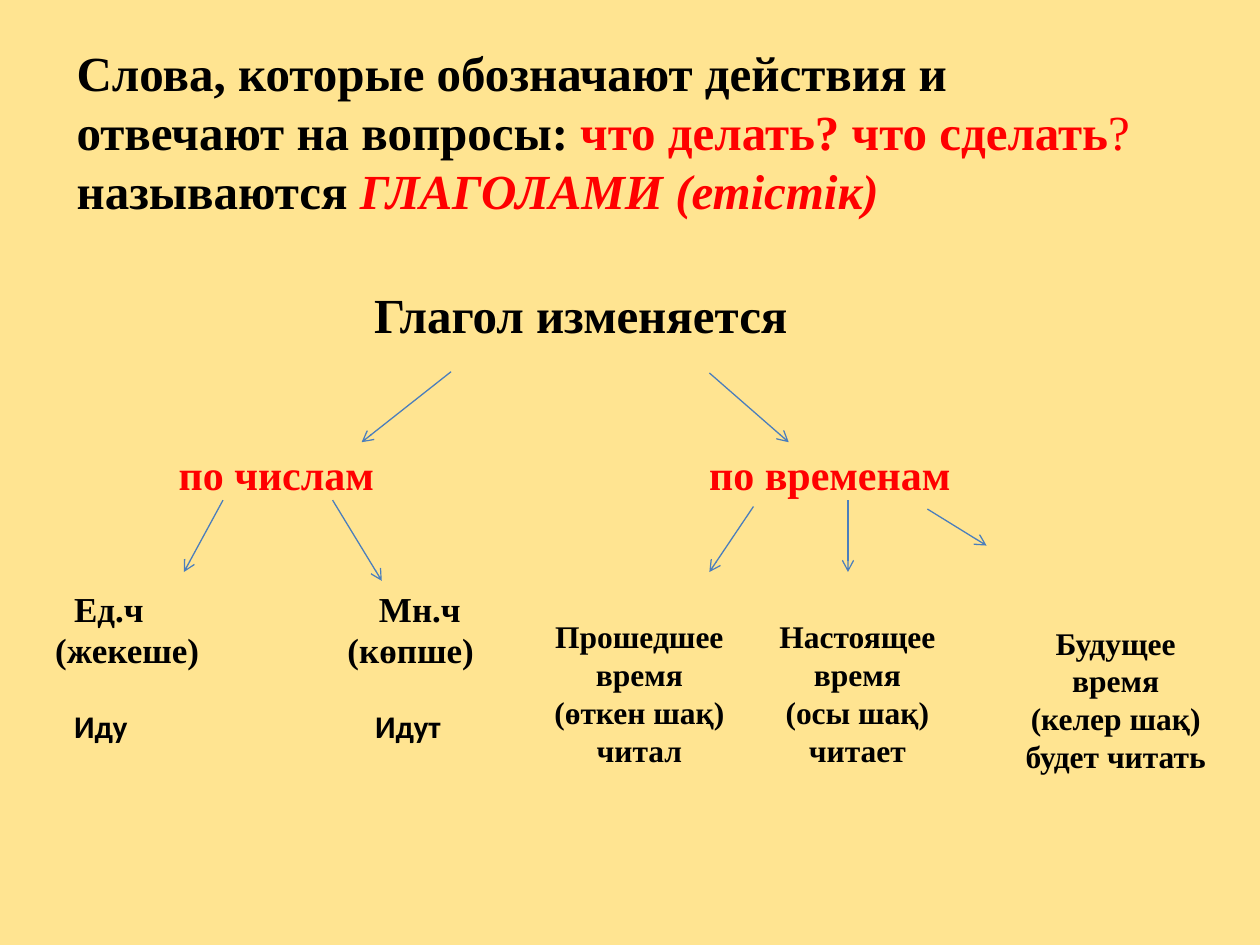
from dataclasses import dataclass

from lxml import etree
from pptx import Presentation
from pptx.dml.color import RGBColor
from pptx.enum.shapes import MSO_CONNECTOR
from pptx.enum.text import PP_ALIGN
from pptx.oxml.ns import qn
from pptx.util import Inches, Pt

STRAIGHT = MSO_CONNECTOR.STRAIGHT
LEFT, CENTER = PP_ALIGN.LEFT, PP_ALIGN.CENTER


@dataclass(frozen=True)
class Theme:
    back: RGBColor = RGBColor.from_string("FFE491")
    ink: RGBColor = RGBColor.from_string("000000")
    red: RGBColor = RGBColor.from_string("FF0000")
    line: RGBColor = RGBColor.from_string("4B7EBC")
    serif: str = "Times New Roman"
    sans: str = "Calibri"
    head: int = 28
    branch: int = 24
    number: int = 20
    small: int = 18
    stroke: float = 0.75


THEME = Theme()

TITLE = [
    ("Слова, которые обозначают действия и отвечают на вопросы: ", THEME.ink, {}),
    ("что делать? что сделать", THEME.red, {}),
    ("? ", THEME.red, {"bold": False}),
    ("называются ", THEME.ink, {}),
    ("ГЛАГОЛАМИ (етістік)", THEME.red, {"italic": True}),
]
BRANCHES = [("по числам", 1.32), ("по временам", 5.53)]
NUMBERS = [
    ("Ед.ч", 0.49, 4.61),
    ("Мн.ч", 2.91, 4.61),
    ("(жекеше)", 0.34, 4.94),
    ("(көпше)", 2.66, 4.94),
]
SAMPLES = [("Иду", 0.49), ("Идут", 2.88)]
TENSES = [
    (4.21, 4.85, "Прошедшее время", "(өткен шақ) читал"),
    (5.94, 4.85, "Настоящее время", "(осы шақ) читает"),
    (7.99, 4.9, "Будущее время", "(келер шақ) будет читать"),
]
ARROWS = [
    (3.58, 2.95, 2.87, 3.51),
    (5.63, 2.96, 6.26, 3.51),
    (1.77, 3.97, 1.46, 4.54),
    (2.64, 3.97, 3.03, 4.61),
    (5.98, 4.02, 5.63, 4.54),
    (6.73, 3.97, 6.73, 4.54),
    (7.36, 4.04, 7.83, 4.33),
]


def add_text(slide, place, lines, size, face=THEME.serif, align=LEFT):
    box = slide.shapes.add_textbox(*map(Inches, place))
    frame = box.text_frame
    frame.word_wrap = True
    for index, runs in enumerate(lines):
        para = frame.paragraphs[0] if index == 0 else frame.add_paragraph()
        para.alignment = align
        for words, color, extra in runs:
            run = para.add_run()
            run.text = words
            style = {"name": face, "size": Pt(size), "bold": True, **extra}
            for key, value in style.items():
                setattr(run.font, key, value)
            run.font.color.rgb = color


def add_label(slide, place, words, size, color=THEME.ink, face=THEME.serif):
    add_text(slide, place, [[(words, color, {})]], size, face)


def add_arrow(slide, ends):
    arrow = slide.shapes.add_connector(STRAIGHT, *map(Inches, ends))
    arrow.line.color.rgb = THEME.line
    arrow.line.width = Pt(THEME.stroke)
    tip = etree.SubElement(arrow.line._get_or_add_ln(), qn("a:tailEnd"))
    tip.set("type", "arrow")
    etree.SubElement(arrow._element.spPr, qn("a:effectLst"))


def add_tense(slide, left, top, *lines):
    rows = [[(words, THEME.ink, {})] for words in lines]
    add_text(slide, (left, top, 1.73, 1.31), rows, THEME.small, align=CENTER)


def main():
    deck = Presentation()
    deck.slide_width, deck.slide_height = Inches(10), Inches(7.5)
    slide = deck.slides.add_slide(deck.slide_layouts[6])
    fill = slide.background.fill
    fill.solid()
    fill.fore_color.rgb = THEME.back

    add_text(slide, (0.51, 0.29, 8.82, 1.51), [TITLE], THEME.head)
    add_label(slide, (2.87, 2.21, 4.02, 0.57), "Глагол изменяется", THEME.head)
    for words, left in BRANCHES:
        add_label(slide, (left, 3.51, 2.6, 0.5), words, THEME.branch, THEME.red)
    for words, left, top in NUMBERS:
        add_label(slide, (left, top, 1.5, 0.44), words, THEME.number)
    for words, left in SAMPLES:
        add_label(slide, (left, 5.56, 1.2, 0.4), words, THEME.small, face=THEME.sans)
    for tense in TENSES:
        add_tense(slide, *tense)
    for ends in ARROWS:
        add_arrow(slide, ends)
    deck.save("out.pptx")


if __name__ == "__main__":
    main()
